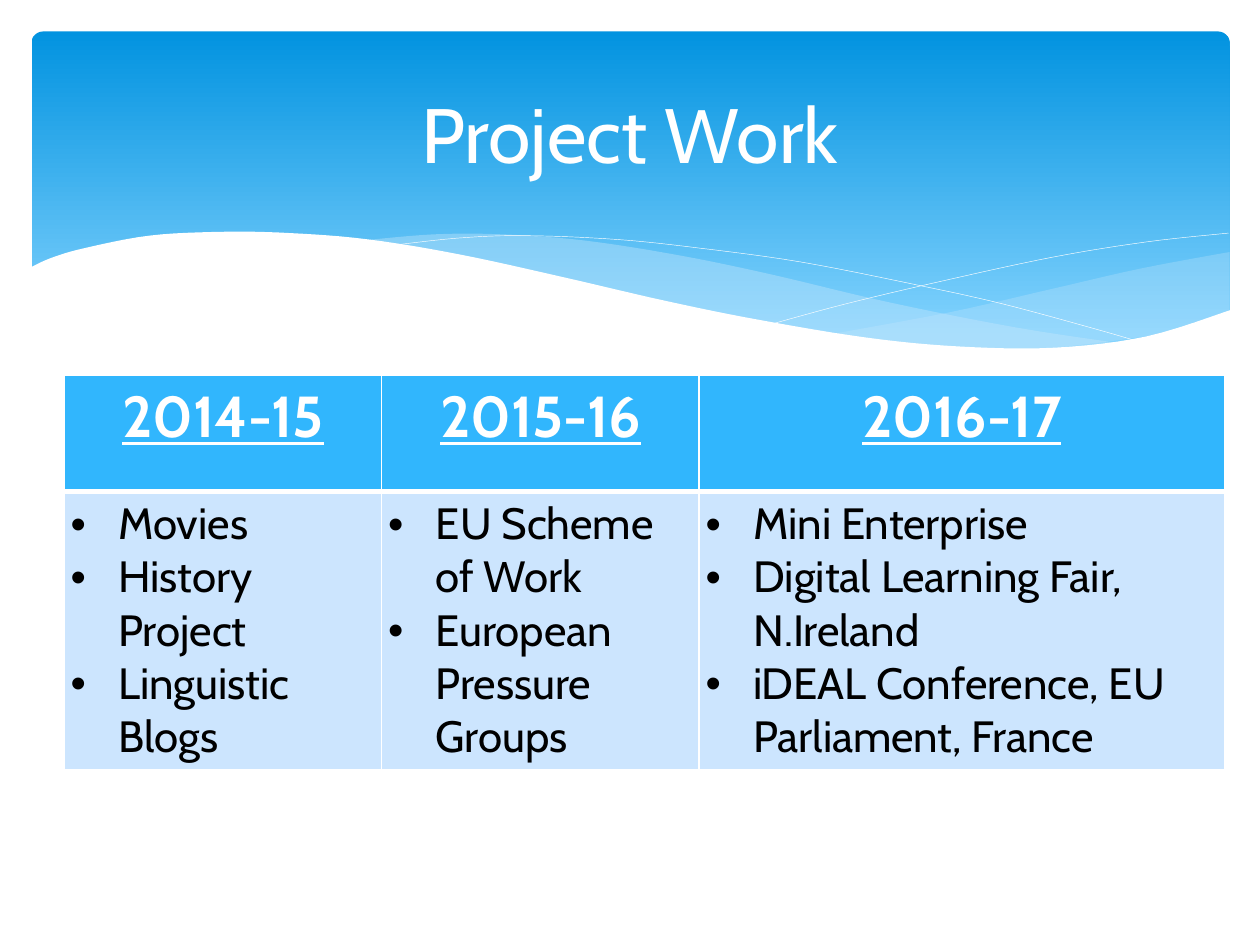
from dataclasses import dataclass

from lxml.etree import SubElement
from pptx import Presentation
from pptx.dml.color import RGBColor
from pptx.enum.shapes import MSO_SHAPE
from pptx.enum.text import MSO_ANCHOR, PP_ALIGN
from pptx.oxml import parse_xml
from pptx.oxml.ns import nsdecls, qn
from pptx.util import Inches, Pt


@dataclass(frozen=True)
class Theme:
    font: str = "Cabin"
    white: str = "FFFFFF"
    text: str = "000000"
    band_top: str = "0293E0"
    band_bottom: str = "83D3FE"
    wave: str = "C6E7FC"
    header: str = "31B6FD"
    body: str = "CCE5FE"
    title_size: int = 44
    header_size: int = 33
    body_size: int = 25


THEME = Theme()

# Wave outlines, in inches from the band's top left corner
RIGHT_WAVE_TOP = [(9.51, 1.75), (8.81, 1.88), (8.07, 2.05), (7.28, 2.23), (6.36, 2.4)]
RIGHT_WAVE_BOTTOM = [(6.36, 2.4), (7.07, 2.49), (7.78, 2.53), (8.47, 2.47),
                     (9.1, 2.37), (9.51, 2.22)]
MIDDLE_WAVE_TOP = [(8.68, 2.48), (7.82, 2.35), (6.81, 2.15), (5.88, 1.93), (5.16, 1.78),
                   (4.4, 1.66), (3.74, 1.61), (3.19, 1.61), (2.61, 1.66)]
MIDDLE_WAVE_BOTTOM = [(2.61, 1.66), (3.37, 1.78), (4.24, 1.97), (5.05, 2.15), (5.93, 2.33),
                      (6.7, 2.45), (7.48, 2.52), (8.13, 2.53), (8.68, 2.48)]
LONG_LINE = [(2.84, 1.7), (3.38, 1.64), (3.91, 1.62), (4.64, 1.65), (5.31, 1.72),
             (6.11, 1.83), (7.02, 2.01), (7.7, 2.16), (8.44, 2.36), (8.82, 2.47)]
SHORT_LINE = [(5.88, 2.32), (6.47, 2.16), (7.23, 1.98), (8.11, 1.79), (8.85, 1.67),
              (9.5, 1.6)]
WHITE_WAVE = [(9.52, 2.21), (8.85, 2.42), (8.12, 2.51), (7.36, 2.5), (6.63, 2.43),
              (5.78, 2.29), (5.04, 2.14), (4.22, 1.95), (3.4, 1.77), (2.67, 1.65),
              (2.05, 1.6), (1.52, 1.59), (0.94, 1.62), (0.42, 1.72), (0.15, 1.8),
              (-0.02, 1.88)]
WHITE_CORNERS = [(-0.02, 3.04), (9.52, 3.04)]

COLUMNS = [
    ("2014-15", 2.52, ["Movies", "History Project", "Linguistic Blogs"]),
    ("2015-16", 2.52, ["EU Scheme of Work", "European Pressure Groups"]),
    ("2016-17", 4.17, ["Mini Enterprise", "Digital Learning Fair, N.Ireland",
                       "iDEAL Conference, EU Parliament, France"]),
]


def rgb(color):
    return RGBColor.from_string(color)


def write(p, text, size, color, align=PP_ALIGN.LEFT, bold=False, underline=False, bullet=False):
    p.alignment = align
    r = p.add_run()
    r.text = text
    font = r.font
    font.name, font.size, font.color.rgb = THEME.font, Pt(size), rgb(color)
    font.bold, font.underline = bold, underline
    if bullet:
        pPr = p._p.get_or_add_pPr()
        indent = Inches(0.38)
        pPr.set("marL", str(indent))
        pPr.set("indent", str(-indent))
        SubElement(pPr, qn("a:buFont")).set("typeface", "Arial")
        SubElement(pPr, qn("a:buChar")).set("char", "•")


def smooth(points, steps=6):
    """Return points along a Catmull-Rom curve through the given ones."""
    padded = [points[0], *points, points[-1]]
    curve = [points[0]]
    for a, b, c, d in zip(padded, padded[1:], padded[2:], padded[3:]):
        for t in (i / steps for i in range(1, steps + 1)):
            curve.append(tuple(
                0.5 * (2 * q + (s - p) * t + (2 * p - 5 * q + 4 * s - u) * t ** 2
                       + (3 * q - p - 3 * s + u) * t ** 3)
                for p, q, s, u in zip(a, b, c, d)))
    return curve


def add_outline(slide, left, top, points, fill=None, alpha=None, line=None):
    emu = [(left + Inches(x), top + Inches(y)) for x, y in points]
    builder = slide.shapes.build_freeform(*emu[0], scale=1.0)
    builder.add_line_segments(emu[1:], close=fill is not None)
    sp = builder.convert_to_shape()
    sp.shadow.inherit = False
    if fill:
        sp.fill.solid()
        sp.fill.fore_color.rgb = rgb(fill)
    else:
        sp.fill.background()
    if alpha:
        color = sp._element.spPr.find(qn("a:solidFill"))[0]
        SubElement(color, qn("a:alpha")).set("val", str(alpha * 1000))
    if line:
        sp.line.color.rgb = rgb(line)
        sp.line.width = Pt(0.25)
    else:
        sp.line.fill.background()


def add_wave_band(slide, left, top, width, height):
    sp = slide.shapes.add_shape(MSO_SHAPE.ROUNDED_RECTANGLE, left, top, width, height)
    sp.adjustments[0] = 0.034
    sp.shadow.inherit = False
    sp.line.fill.background()
    sp.fill.gradient()
    sp.fill.gradient_angle = 270
    stops = ((0, THEME.band_top), (0.9, THEME.band_bottom))
    for stop, (position, color) in zip(sp.fill.gradient_stops, stops):
        stop.position = position
        stop.color.rgb = rgb(color)

    right_wave = smooth(RIGHT_WAVE_TOP) + smooth(RIGHT_WAVE_BOTTOM)
    middle_wave = smooth(MIDDLE_WAVE_TOP) + smooth(MIDDLE_WAVE_BOTTOM)
    add_outline(slide, left, top, right_wave, fill=THEME.wave, alpha=29)
    add_outline(slide, left, top, middle_wave, fill=THEME.wave, alpha=40)
    for points in (LONG_LINE, SHORT_LINE):
        add_outline(slide, left, top, smooth(points), line=THEME.white)
    add_outline(slide, left, top, smooth(WHITE_WAVE) + WHITE_CORNERS, fill=THEME.white)


def place_title(slide, text, left, top, width, height):
    title = slide.shapes.title
    title.left, title.top, title.width, title.height = left, top, width, height
    tf = title.text_frame
    tf.word_wrap = True
    tf.vertical_anchor = MSO_ANCHOR.MIDDLE
    tf.margin_left = tf.margin_right = tf.margin_top = tf.margin_bottom = Inches(0.05)
    write(tf.paragraphs[0], text, THEME.title_size, THEME.white, align=PP_ALIGN.CENTER)
    slide.shapes._spTree.append(title._element)  # bring in front of the band


def format_cell(cell, fill, top=1, bottom=1):
    cell.margin_left = cell.margin_right = cell.margin_top = cell.margin_bottom = Inches(0.05)
    cell.vertical_anchor = MSO_ANCHOR.TOP
    cell.fill.solid()
    cell.fill.fore_color.rgb = rgb(fill)
    tcPr = cell._tc.get_or_add_tcPr()
    for i, (side, width) in enumerate(zip("LRTB", (1, 1, top, bottom))):
        tcPr.insert(i, parse_xml(
            f'<a:ln{side} {nsdecls("a")} w="{Pt(width)}"><a:solidFill>'
            f'<a:srgbClr val="{THEME.white}"/></a:solidFill></a:ln{side}>'))


def add_project_table(slide, left, top, width, height):
    table = slide.shapes.add_table(2, len(COLUMNS), left, top, width, height).table
    table.rows[0].height = Inches(0.92)
    table.rows[1].height = height - Inches(0.92)
    for i, (year, column_width, projects) in enumerate(COLUMNS):
        table.columns[i].width = Inches(column_width)
        header, body = table.cell(0, i), table.cell(1, i)
        format_cell(header, THEME.header, bottom=3)
        write(header.text_frame.paragraphs[0], year, THEME.header_size, THEME.white,
              align=PP_ALIGN.CENTER, bold=True, underline=True)
        format_cell(body, THEME.body, top=3)
        tf = body.text_frame
        for n, project in enumerate(projects):
            p = tf.add_paragraph() if n else tf.paragraphs[0]
            write(p, project, THEME.body_size, THEME.text, bullet=True)


def main():
    prs = Presentation()
    prs.slide_width, prs.slide_height = Inches(10), Inches(7.5)
    slide = prs.slides.add_slide(prs.slide_layouts[5])
    add_wave_band(slide, Inches(0.25), Inches(0.25), Inches(9.51), Inches(2.7))
    place_title(slide, "Project Work", Inches(0.5), Inches(0.37), Inches(9), Inches(1.37))
    add_project_table(slide, Inches(0.51), Inches(2.98), Inches(9.21), Inches(3.11))
    prs.save("out.pptx")


if __name__ == "__main__":
    main()
